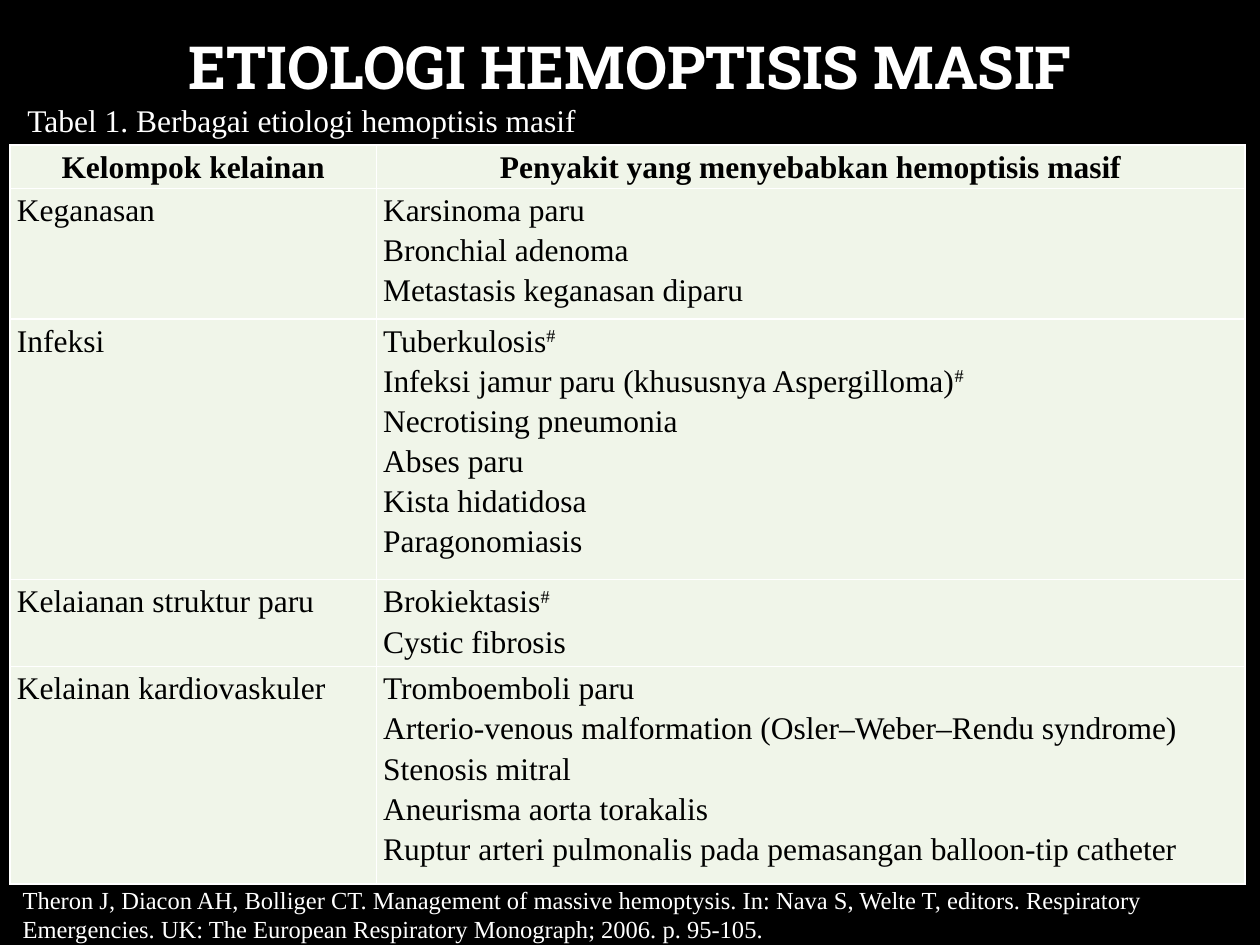
from dataclasses import dataclass

from lxml import etree
from pptx import Presentation
from pptx.dml.color import RGBColor
from pptx.enum.text import MSO_ANCHOR, PP_ALIGN
from pptx.oxml.ns import qn
from pptx.util import Pt

LEFT, CENTER, JUSTIFY = PP_ALIGN.LEFT, PP_ALIGN.CENTER, PP_ALIGN.JUSTIFY
MIDDLE = MSO_ANCHOR.MIDDLE


@dataclass(frozen=True)
class Theme:
    back: str = "000000"
    light: str = "FFFFFF"
    dark: str = "000000"
    cell: str = "F0F5E9"
    head: str = "Roboto Slab"
    body: str = "Times New Roman"
    title: float = 34
    text: float = 18
    note: float = 14


THEME = Theme()

# A closing "#" is set as a superscript mark
HEADS = ["Kelompok kelainan", "Penyakit yang menyebabkan hemoptisis masif"]
GROUPS = [
    ("Keganasan", ["Karsinoma paru", "Bronchial adenoma",
                   "Metastasis keganasan diparu"]),
    ("Infeksi", ["Tuberkulosis#",
                 "Infeksi jamur paru (khususnya Aspergilloma)#",
                 "Necrotising pneumonia", "Abses paru",
                 "Kista hidatidosa", "Paragonomiasis"]),
    ("Kelaianan struktur paru", ["Brokiektasis#", "Cystic fibrosis"]),
    ("Kelainan kardiovaskuler", [
        "Tromboemboli paru",
        "Arterio-venous malformation (Osler–Weber–Rendu syndrome)",
        "Stenosis mitral", "Aneurisma aorta torakalis",
        "Ruptur arteri pulmonalis pada pemasangan balloon-tip catheter"]),
]
SOURCE = ("Theron J, Diacon AH, Bolliger CT. Management of massive hemoptysis. "
          "In: Nava S, Welte T, editors. Respiratory Emergencies. UK: The "
          "European Respiratory Monograph; 2006. p. 95-105.")


def write(frame, lines, size=THEME.text, font=THEME.body, color=THEME.light,
          bold=False, align=LEFT, space=1.0):
    frame.word_wrap = True
    for i, line in enumerate(lines):
        para = frame.add_paragraph() if i else frame.paragraphs[0]
        para.alignment, para.line_spacing = align, space
        word, mark, _ = line.partition("#")
        for part in filter(None, (word, mark)):
            run = para.add_run()
            run.text = part
            run.font.size, run.font.name = Pt(size), font
            run.font.bold = bold
            run.font.color.rgb = RGBColor.from_string(color)
            if part == "#":
                run.font._element.set("baseline", "30000")


def label(slide, box, text, **style):
    shape = slide.shapes.add_textbox(*map(Pt, box))
    shape.text_frame.vertical_anchor = MIDDLE
    write(shape.text_frame, [text], **style)


def border(cell, color, width=1):
    props = cell._tc.get_or_add_tcPr()
    for i, side in enumerate(("lnL", "lnR", "lnT", "lnB")):
        line = etree.Element(qn(f"a:{side}"), w=str(Pt(width)))
        fill = etree.SubElement(line, qn("a:solidFill"))
        etree.SubElement(fill, qn("a:srgbClr"), val=color)
        props.insert(i, line)


def fill_cell(cell, lines, **style):
    cell.margin_left = cell.margin_right = Pt(3.9)
    cell.margin_top = cell.margin_bottom = 0
    cell.fill.solid()
    cell.fill.fore_color.rgb = RGBColor.from_string(THEME.cell)
    border(cell, THEME.light)
    write(cell.text_frame, lines, color=THEME.dark, space=1.15, **style)


def causes(slide, box, widths, heights):
    shape = slide.shapes.add_table(len(heights), len(widths), *map(Pt, box))
    grid = shape.table
    for col, width in zip(grid.columns, widths):
        col.width = Pt(width)
    for row, height in zip(grid.rows, heights):
        row.height = Pt(height)
    shape.height = Pt(box[3])
    for i, head in enumerate(HEADS):
        fill_cell(grid.cell(0, i), [head], bold=True, align=CENTER)
    for i, (group, items) in enumerate(GROUPS, 1):
        fill_cell(grid.cell(i, 0), [group], align=JUSTIFY)
        fill_cell(grid.cell(i, 1), items, align=JUSTIFY)


def main():
    deck = Presentation()
    deck.slide_width, deck.slide_height = Pt(720), Pt(540)
    slide = deck.slides.add_slide(deck.slide_layouts[6])
    slide.background.fill.solid()
    slide.background.fill.fore_color.rgb = RGBColor.from_string(THEME.back)

    # Title
    label(slide, (0, 14.5, 720, 51.8), "ETIOLOGI HEMOPTISIS MASIF",
          size=THEME.title, font=THEME.head, bold=True, align=CENTER,
          space=0.9)
    # Table with its caption
    causes(slide, (5.8, 82.8, 705.6, 422.6), [209.2, 496.4],
           [23, 69.4, 140.2, 46.2, 116.4])
    label(slide, (8.6, 48.5, 425.5, 39.6),
          "Tabel 1. Berbagai etiologi hemoptisis masif")
    # Reference
    label(slide, (5.8, 502.6, 711.4, 39.6), SOURCE, size=THEME.note)

    deck.save("out.pptx")


if __name__ == "__main__":
    main()
